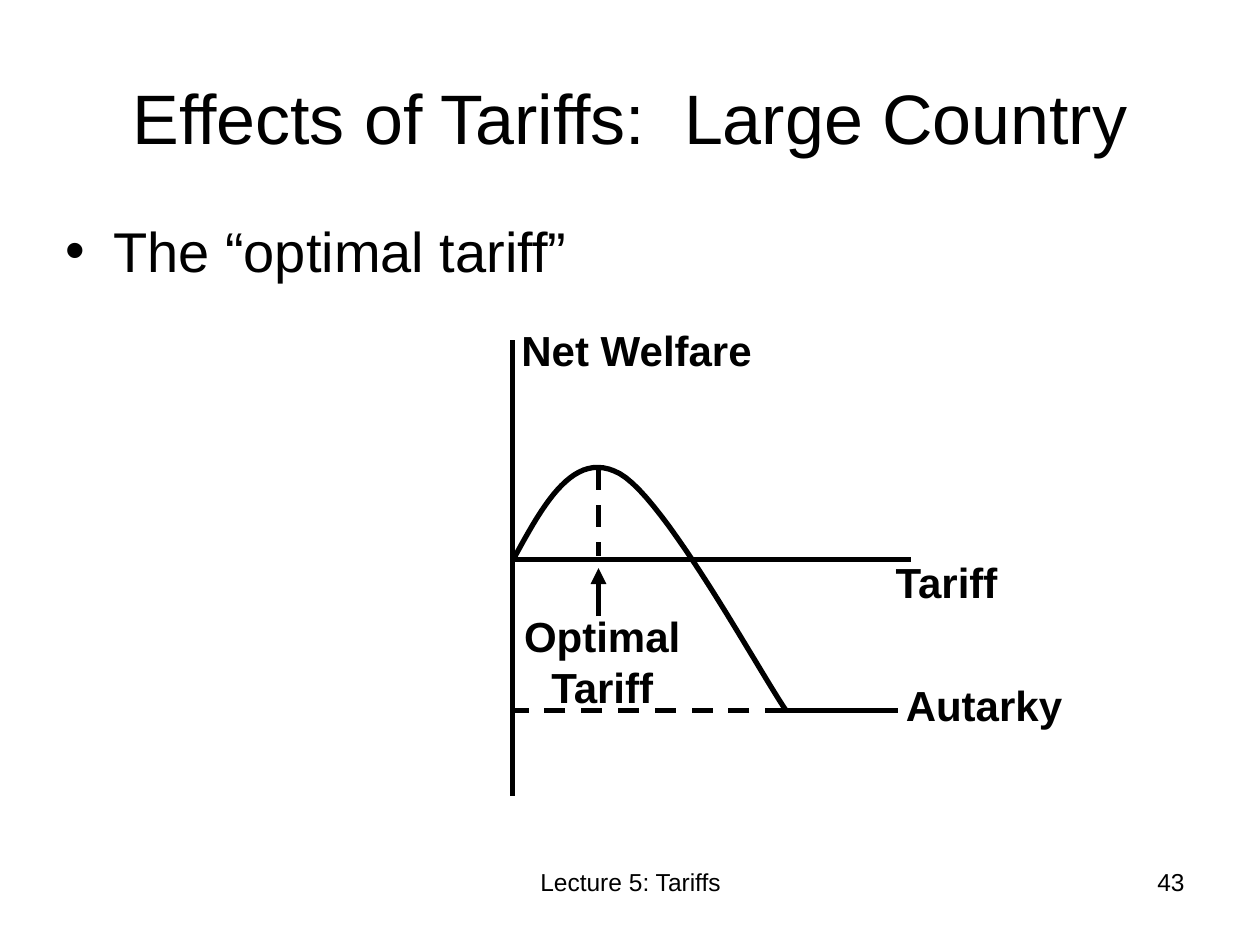
from lxml.etree import SubElement
from pptx import Presentation
from pptx.dml.color import RGBColor
from pptx.enum.dml import MSO_LINE
from pptx.enum.shapes import MSO_CONNECTOR
from pptx.enum.text import MSO_ANCHOR, PP_ALIGN
from pptx.oxml.ns import qn
from pptx.util import Inches, Pt

COLORS = {"ink": "000000", "paper": "FFFFFF"}
FONT = "Arial"
LINE_WIDTH = 3
LEFT, CENTER, RIGHT = PP_ALIGN.LEFT, PP_ALIGN.CENTER, PP_ALIGN.RIGHT
TOP, MIDDLE = MSO_ANCHOR.TOP, MSO_ANCHOR.MIDDLE

# Text: wording, (left, top, width, height), size, alignment, anchor
TITLE = ("Effects of Tariffs:  Large Country", (0.5, 0.3, 9, 1.25), 40, CENTER, MIDDLE)
BULLET = ("The “optimal tariff”", (0.42, 1.67, 4.42, 4.92), 32, LEFT, TOP)
FOOTERS = [
    ("Lecture 5: Tariffs", (3.42, 6.83, 3.17, 0.52), 14, CENTER, TOP),
    ("43", (7.17, 6.83, 2.33, 0.52), 14, RIGHT, TOP),
]
GRAPH_LABELS = [
    ("Tariff", (7.01, 4.37, 1.17, 0.58), 24, LEFT, TOP),
    ("Net Welfare", (4.04, 2.53, 3.43, 0.58), 24, LEFT, TOP),
    ("Optimal Tariff", (3.98, 4.8, 1.6, 0.93), 24, CENTER, TOP),
    ("Autarky", (7.09, 5.34, 1.58, 0.58), 24, LEFT, TOP),
]

# Graph geometry
AXIS_X, AXIS_Y = 4.07, 4.44
OPTIMUM_X = 4.75
AUTARKY = (6.24, 5.64)
LINES = [  # start, end, style
    ((AXIS_X, 2.7), (AXIS_X, 6.32), "solid"),
    ((AXIS_X, AXIS_Y), (7.23, AXIS_Y), "solid"),
    (AUTARKY, (7.13, AUTARKY[1]), "solid"),
    (AUTARKY, (4.08, AUTARKY[1]), "dash"),
    ((OPTIMUM_X, 3.72), (OPTIMUM_X, 4.41), "dash"),
    ((OPTIMUM_X, 4.89), (OPTIMUM_X, 4.51), "arrow"),
]
WELFARE_CURVE = [  # cubic Bezier segments
    ((4.08, 4.43), (4.32, 3.99), (4.56, 3.56), (4.92, 3.76)),
    ((4.92, 3.76), (5.28, 3.96), (6.02, 5.32), AUTARKY),
]
CURVE_STEPS = 24


def rgb(name):
    return RGBColor.from_string(COLORS[name])


def add_text(s, text, box, size, align, anchor, bold=False):
    tf = s.shapes.add_textbox(*map(Inches, box)).text_frame
    tf.word_wrap = True
    tf.vertical_anchor = anchor
    p = tf.paragraphs[0]
    p.text = text
    p.alignment = align
    p.font.name, p.font.size, p.font.bold = FONT, Pt(size), bold
    p.font.color.rgb = rgb("ink")
    return p


def add_bullet(p, indent, space):
    pPr = p._p.get_or_add_pPr()
    pPr.set("marL", str(Inches(indent)))
    pPr.set("indent", str(-Inches(indent)))
    p.space_before = Pt(space)
    defaults = pPr.find(qn("a:defRPr"))
    for tag, attrs in (("a:buFont", {"typeface": FONT}), ("a:buChar", {"char": "•"})):
        defaults.addprevious(pPr.makeelement(qn(tag), attrs))


def style_line(line):
    line.color.rgb = rgb("ink")
    line.width = Pt(LINE_WIDTH)


def add_line(s, start, end, style):
    c = s.shapes.add_connector(MSO_CONNECTOR.STRAIGHT, *map(Inches, start + end))
    style_line(c.line)
    if style == "dash":
        c.line.dash_style = MSO_LINE.DASH
    elif style == "arrow":
        SubElement(c.line._get_or_add_ln(), qn("a:tailEnd"), type="triangle")
    SubElement(c._element.spPr, qn("a:effectLst"))


def bezier(points, t):
    weights = ((1 - t) ** 3, 3 * t * (1 - t) ** 2, 3 * t**2 * (1 - t), t**3)
    return tuple(Inches(sum(w * v for w, v in zip(weights, axis))) for axis in zip(*points))


def add_curve(s, segments):
    points = [bezier(seg, i / CURVE_STEPS) for seg in segments for i in range(CURVE_STEPS + 1)]
    builder = s.shapes.build_freeform(*points[0])
    builder.add_line_segments(points[1:], close=False)
    sp = builder.convert_to_shape()
    sp.shadow.inherit = False
    sp.fill.background()
    style_line(sp.line)


def main():
    prs = Presentation()
    prs.slide_width, prs.slide_height = Inches(10), Inches(7.5)
    s = prs.slides.add_slide(prs.slide_layouts[6])
    s.background.fill.solid()
    s.background.fill.fore_color.rgb = rgb("paper")

    # Title, bullet and footers
    for item in FOOTERS + [TITLE]:
        add_text(s, *item)
    add_bullet(add_text(s, *BULLET), indent=0.38, space=6.4)

    # Welfare graph
    for line in LINES:
        add_line(s, *line)
    add_curve(s, WELFARE_CURVE)
    for label in GRAPH_LABELS:
        add_text(s, *label, bold=True)

    prs.save("out.pptx")


if __name__ == "__main__":
    main()
